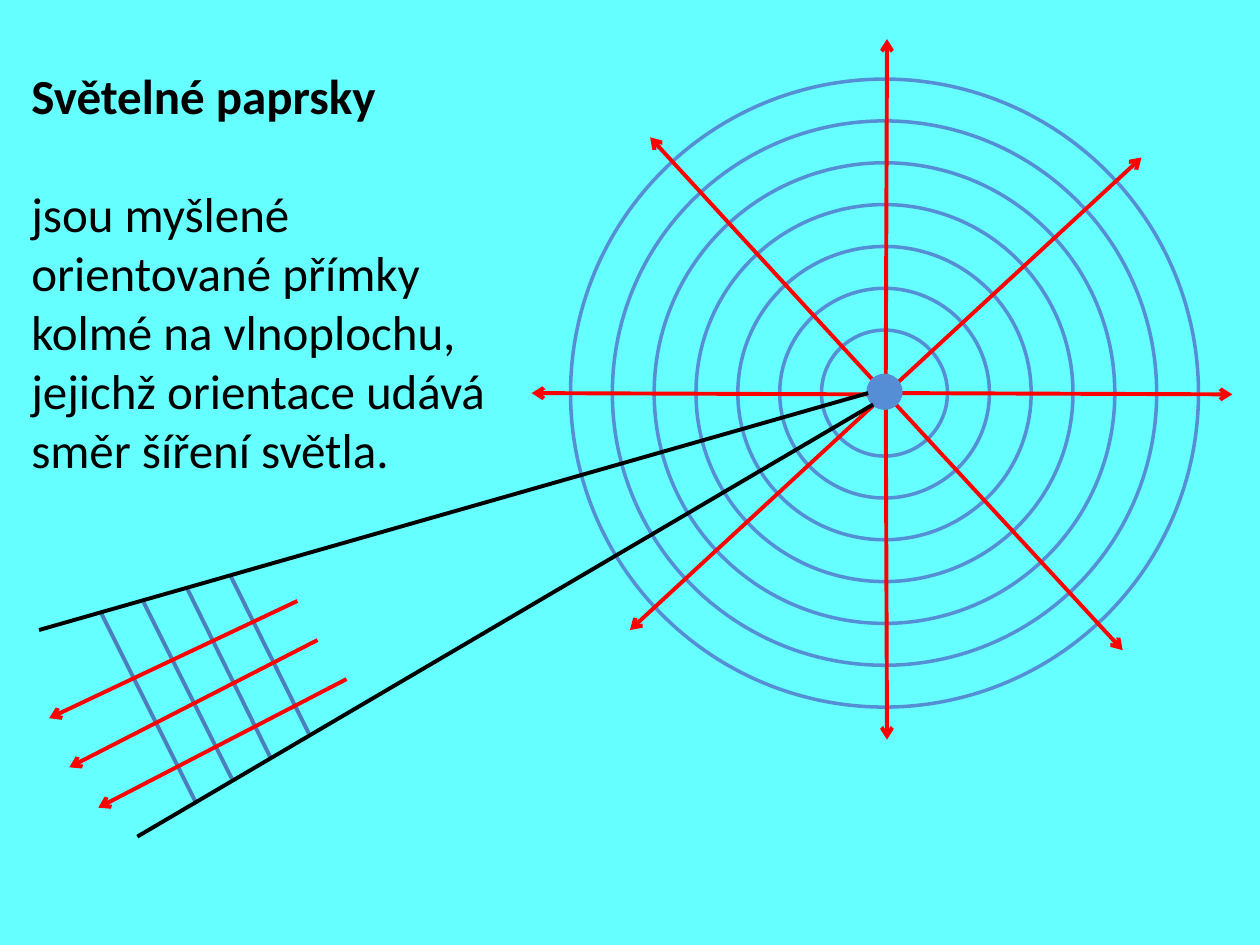
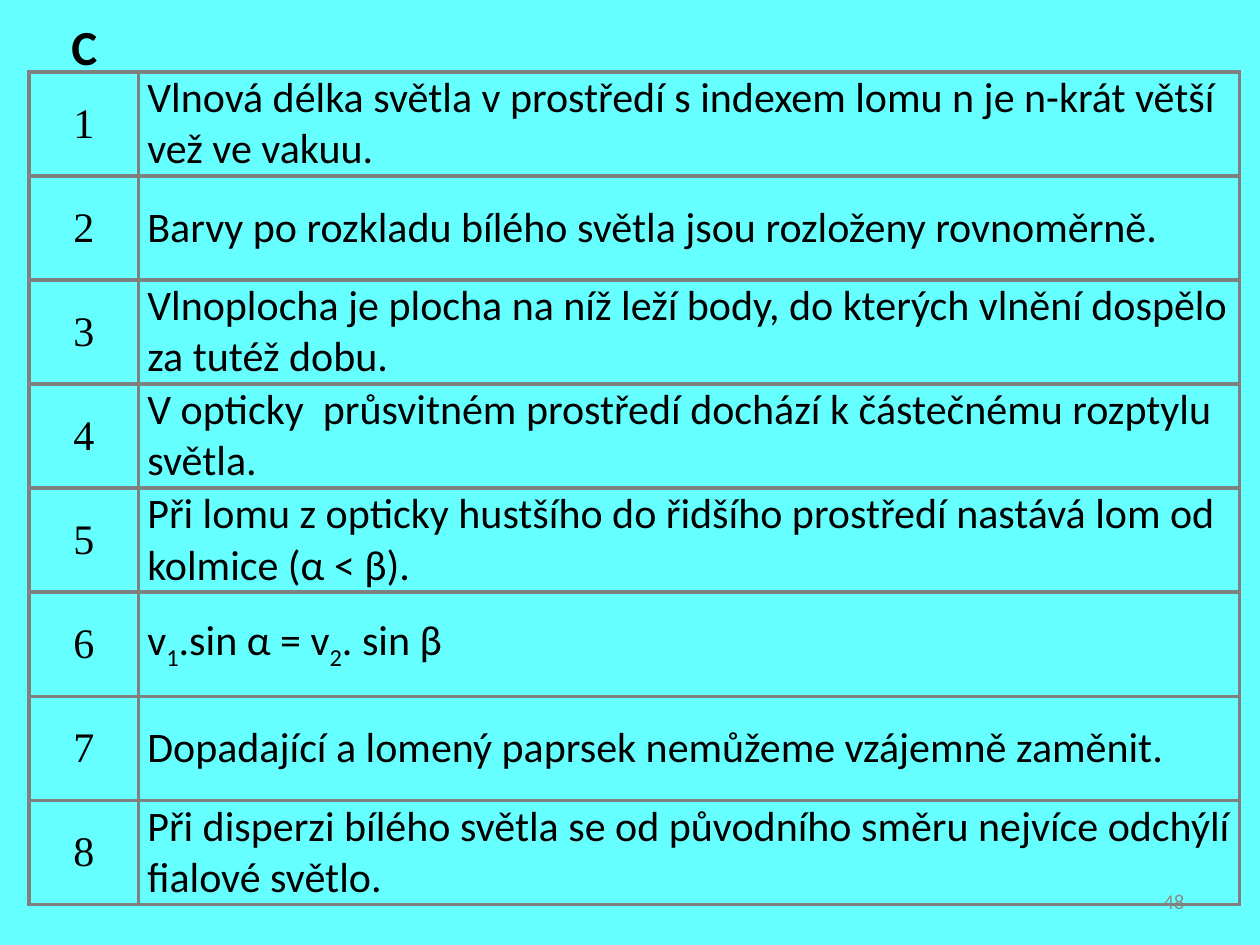
from lxml.etree import SubElement
from pptx import Presentation
from pptx.dml.color import RGBColor
from pptx.enum.shapes import MSO_CONNECTOR, MSO_SHAPE
from pptx.enum.text import MSO_ANCHOR, PP_ALIGN
from pptx.oxml.ns import qn
from pptx.util import Inches, Pt

BACK, BLACK, RED = "66FFFF", "000000", "FF0000"
WAVE, FRONT, GREY, PALE = "558ED5", "4B7EBC", "808080", "8C8C8C"

# start and tip of each ray, from the light source
RAYS = [
    (0.01, -0.14, 0.02, -2.81), (-0.13, 0.01, -2.8, 0),
    (0.09, 0, 2.76, 0.01), (0.01, 0.08, 0.02, 2.75),
    (0.09, -0.07, 2.04, -1.87), (-0.07, 0.08, -2.02, 1.88),
    (0.09, 0.09, 1.89, 2.04), (-0.07, -0.08, -1.86, -2.03),
]
# lines of the beam, from the top left of its box
FRONTS = [(1.52, 0, 2.14, 1.25), (1.17, 0.09, 1.84, 1.45),
          (0.83, 0.21, 1.53, 1.61), (0.49, 0.29, 1.25, 1.81)]
EDGES = [(6.58, -1.45, 0, 0.43), (6.62, -1.36, 0.78, 2.07)]
BEAMS = [(2.44, 0.82, 0.47, 1.84), (2.05, 0.2, 0.08, 1.13),
         (2.21, 0.51, 0.24, 1.52)]

# underscores enclose subscripts
CLAIMS = [
    "Vlnová délka světla v prostředí s indexem lomu n je n-krát větší vež ve vakuu.",
    "Barvy po rozkladu bílého světla jsou rozloženy rovnoměrně.",
    "Vlnoplocha je plocha na níž leží body, do kterých vlnění dospělo za tutéž dobu.",
    "V opticky  průsvitném prostředí dochází k částečnému rozptylu světla.",
    "Při lomu z opticky hustšího do řidšího prostředí nastává lom od kolmice (α < β).",
    "v_1_.sin α = v_2_. sin β",
    "Dopadající a lomený paprsek nemůžeme vzájemně zaměnit.",
    "Při disperzi bílého světla se od původního směru nejvíce odchýlí fialové světlo.",
]


def rgb(code):
    return RGBColor.from_string(code)


def write(para, text, size=24, font="Calibri", color=BLACK, bold=False,
          align=PP_ALIGN.LEFT, after=0):
    para.alignment = align
    para.space_after = Pt(after)
    for i, part in enumerate(text.split("_")):
        run = para.add_run()
        run.text = part
        run.font.size, run.font.name, run.font.bold = Pt(size), font, bold
        run.font.color.rgb = rgb(color)
        if i % 2:
            run.font._element.set("baseline", "-25000")


def add_box(slide, left, top, width, height, anchor=MSO_ANCHOR.TOP):
    box = slide.shapes.add_textbox(*map(Inches, (left, top, width, height)))
    frame = box.text_frame
    frame.word_wrap = True
    frame.vertical_anchor = anchor
    return frame


def add_disc(slide, x, y, radius, fill=None):
    disc = slide.shapes.add_shape(
        MSO_SHAPE.OVAL, Inches(x - radius), Inches(y - radius),
        Inches(2 * radius), Inches(2 * radius))
    disc.shadow.inherit = False
    if fill:
        disc.fill.solid()
        disc.fill.fore_color.rgb = rgb(fill)
    else:
        disc.fill.background()
    disc.line.color.rgb = rgb(WAVE)
    disc.line.width = Pt(2)


def add_lines(slide, x, y, ends, color, arrow=False):
    """Draw straight lines whose ends are offsets from x, y."""
    for x1, y1, x2, y2 in ends:
        line = slide.shapes.add_connector(
            MSO_CONNECTOR.STRAIGHT, Inches(x + x1), Inches(y + y1),
            Inches(x + x2), Inches(y + y2))
        line.line.color.rgb = rgb(color)
        line.line.width = Pt(2.25)
        props = line._element.spPr
        if arrow:
            SubElement(props.find(qn("a:ln")), qn("a:tailEnd"), type="arrow")
        SubElement(props, qn("a:effectLst"))


def add_source(slide, x, y):
    """Draw wavefronts and rays around a light source at x, y."""
    for i in range(7):
        add_disc(slide, x, y, 0.5 + 0.332 * i)
    add_lines(slide, x, y, RAYS, RED, arrow=True)
    add_disc(slide, x, y - 0.01, 0.13, WAVE)


def add_beam(slide, left, top):
    add_lines(slide, left, top, FRONTS, FRONT)
    add_lines(slide, left, top, EDGES, BLACK)
    add_lines(slide, left, top, BEAMS, RED, arrow=True)


def set_cell(cell):
    cell.fill.background()
    cell.vertical_anchor = MSO_ANCHOR.MIDDLE
    cell.margin_left = cell.margin_right = Inches(0.07)
    cell.margin_top = cell.margin_bottom = 0
    props = cell._tc.get_or_add_tcPr()
    for i, side in enumerate(("lnL", "lnR", "lnT", "lnB")):
        edge = props.makeelement(qn("a:" + side), {"w": str(Pt(2.25))})
        fill = SubElement(edge, qn("a:solidFill"))
        SubElement(fill, qn("a:srgbClr"), val=GREY)
        props.insert(i, edge)


def add_claims(slide, left, top, width, height):
    shape = slide.shapes.add_table(
        len(CLAIMS), 2, *map(Inches, (left, top, width, height)))
    table = shape.table
    table.first_row = table.horz_banding = False
    table.columns[0].width = Inches(0.87)
    table.columns[1].width = Inches(width - 0.87)
    for i, claim in enumerate(CLAIMS):
        num, body = table.rows[i].cells
        set_cell(num)
        set_cell(body)
        para = num.text_frame.paragraphs[0]
        write(para, str(i + 1), font="Times New Roman", align=PP_ALIGN.CENTER)
        indent = Inches(0.38)
        para._p.get_or_add_pPr().set("marL", str(indent))
        para._p.get_or_add_pPr().set("indent", str(-indent))
        write(body.text_frame.paragraphs[0], claim)


def add_slide(deck):
    slide = deck.slides.add_slide(deck.slide_layouts[6])
    slide.background.fill.solid()
    slide.background.fill.fore_color.rgb = rgb(BACK)
    return slide


def build_rays(deck):
    slide = add_slide(deck)
    frame = add_box(slide, 0.15, 0.47, 4.23, 3.4)
    write(frame.paragraphs[0], "Světelné paprsky", size=28, bold=True, after=34)
    write(frame.add_paragraph(),
          "jsou myšlené orientované přímky kolmé na vlnoplochu, "
          "jejichž orientace udává směr šíření světla.", size=28)
    add_source(slide, 7.02, 3.12)
    add_beam(slide, 0.31, 4.57)


def build_quiz(deck):
    slide = add_slide(deck)
    page = add_box(slide, 7.17, 6.95, 2.33, 0.4, MSO_ANCHOR.MIDDLE)
    write(page.paragraphs[0], "48", size=12, color=PALE, align=PP_ALIGN.RIGHT)
    add_claims(slide, 0.23, 0.57, 9.61, 6.61)
    mark = add_box(slide, 0.32, 0.08, 0.7, 0.57)
    write(mark.paragraphs[0], "C", size=28, bold=True, align=PP_ALIGN.CENTER)


def main():
    deck = Presentation()
    deck.slide_width, deck.slide_height = Inches(10), Inches(7.5)
    build_rays(deck)
    build_quiz(deck)
    deck.save("out.pptx")


if __name__ == "__main__":
    main()
